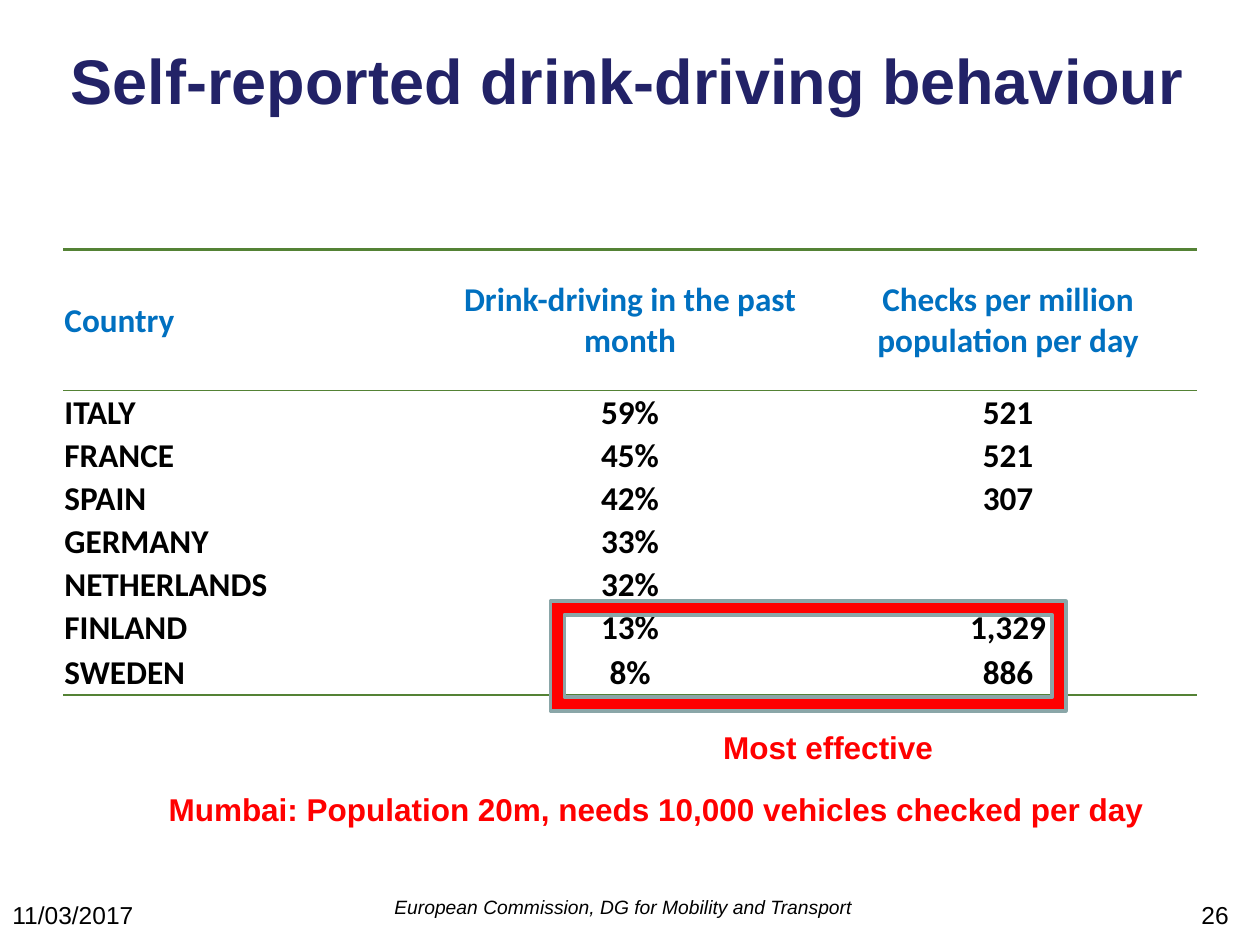
from lxml.etree import SubElement
from pptx import Presentation
from pptx.dml.color import RGBColor
from pptx.enum.shapes import MSO_SHAPE
from pptx.enum.text import MSO_ANCHOR, PP_ALIGN
from pptx.oxml.ns import qn
from pptx.util import Cm, Pt

NAVY = RGBColor(0x22, 0x22, 0x67)
BLUE = RGBColor(0x00, 0x70, 0xC0)
GREEN = RGBColor(0x54, 0x82, 0x35)
RED = RGBColor(0xFF, 0x00, 0x00)
GREY = RGBColor(0x8A, 0xA6, 0xA8)
BLACK = RGBColor(0x00, 0x00, 0x00)

# Content
ROWS = [
    ("Country", "Drink-driving in the past month", "Checks per million population per day"),
    ("ITALY", "59%", "521"),
    ("FRANCE", "45%", "521"),
    ("SPAIN", "42%", "307"),
    ("GERMANY", "33%", ""),
    ("NETHERLANDS", "32%", ""),
    ("FINLAND", "13%", "1,329"),
    ("SWEDEN", "8%", "886"),
]
ROW_HEIGHTS = [2.84] + [0.87] * 6 + [0.92]
RULES = {0: 1.5, 1: 0.5, len(ROWS): 1.5}  # row boundary: line width in points

# Text, (left, top, width, height) in cm, size, colour, alignment, bold, italic, wrap
TITLE = ("Self-reported drink-driving behaviour", (1.07, 0.71, 23.16, 3.33),
         36, NAVY, PP_ALIGN.CENTER, True, False, False)
FOOTERS = [
    ("11/03/2017", (0, 18.01, 5.92, 1.32), 14, BLACK, PP_ALIGN.LEFT, False, False, True),
    ("26", (19.1, 18.01, 5.92, 1.32), 14, BLACK, PP_ALIGN.RIGHT, False, False, True),
    ("European Commission, DG for Mobility and Transport", (7.7, 17.93, 9.83, 1.19),
     11, BLACK, PP_ALIGN.LEFT, False, True, False),
]
NOTES = [
    ("Mumbai: Population 20m, needs 10,000 vehicles checked per day",
     (3.15, 15.8, 20.35, 1.02), 18, RED, PP_ALIGN.LEFT, True, False, False),
    ("Most effective", (14.33, 14.55, 4.78, 1.02),
     18, RED, PP_ALIGN.LEFT, True, False, False),
]


def style_paragraph(paragraph, name, size, color, alignment, bold, italic=False):
    paragraph.alignment = alignment
    for run in paragraph.runs:
        font = run.font
        font.name, font.size = name, Pt(size)
        font.bold, font.italic = bold, italic
        font.color.rgb = color


def add_label(slide, text, place, size, color, alignment, bold, italic, wrap):
    text_frame = slide.shapes.add_textbox(*map(Cm, place)).text_frame
    text_frame.word_wrap = wrap
    text_frame.text = text
    style_paragraph(text_frame.paragraphs[0], "Arial", size, color, alignment, bold, italic)


def set_borders(cell, top, bottom):
    properties = cell._tc.get_or_add_tcPr()
    for tag, width in (("lnL", None), ("lnR", None), ("lnT", top), ("lnB", bottom)):
        line = SubElement(properties, qn(f"a:{tag}"), w=str(Pt(width or 0)))
        if width:
            fill = SubElement(line, qn("a:solidFill"))
            SubElement(fill, qn("a:srgbClr"), val=str(GREEN))
        else:
            SubElement(line, qn("a:noFill"))


def add_country_table(slide):
    table = slide.shapes.add_table(
        len(ROWS), len(ROWS[0]), Cm(1.27), Cm(5.03), Cm(22.86), Cm(sum(ROW_HEIGHTS))).table
    table.first_row = table.horz_banding = False
    for row_index, texts in enumerate(ROWS):
        table.rows[row_index].height = Cm(ROW_HEIGHTS[row_index])
        for column_index, text in enumerate(texts):
            cell = table.cell(row_index, column_index)
            cell.margin_left = cell.margin_right = cell.margin_top = Cm(0.03)
            cell.margin_bottom = 0
            cell.vertical_anchor = MSO_ANCHOR.MIDDLE
            cell.text_frame.text = text
            style_paragraph(cell.text_frame.paragraphs[0], "Calibri", 19,
                            BLACK if row_index else BLUE,
                            PP_ALIGN.CENTER if column_index else PP_ALIGN.LEFT, True)
            set_borders(cell, RULES.get(row_index), RULES.get(row_index + 1))
            cell.fill.background()


def add_highlight(slide):
    frame = slide.shapes.add_shape(MSO_SHAPE.FRAME, Cm(11.1), Cm(12.12), Cm(10.39), Cm(2.21))
    frame.shadow.inherit = False
    frame.fill.solid()
    frame.fill.fore_color.rgb = RED
    frame.line.color.rgb = GREY
    frame.line.width = Pt(2)


def main():
    presentation = Presentation()
    presentation.slide_width, presentation.slide_height = Cm(25.4), Cm(19.05)
    slide = presentation.slides.add_slide(presentation.slide_layouts[6])
    for label in [TITLE] + FOOTERS:
        add_label(slide, *label)
    add_country_table(slide)
    add_highlight(slide)
    for label in NOTES:
        add_label(slide, *label)
    presentation.save("out.pptx")


if __name__ == "__main__":
    main()
